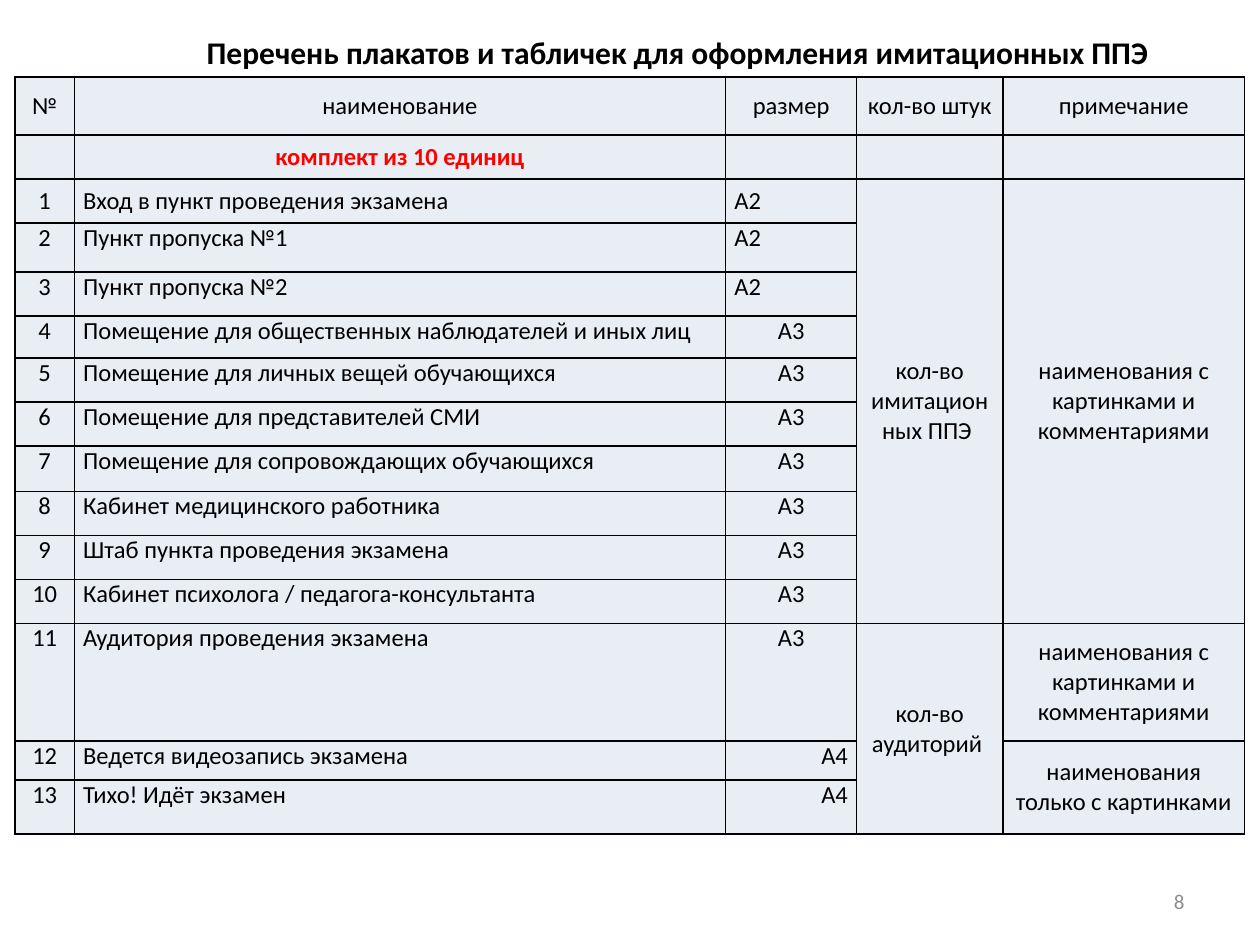
from dataclasses import dataclass

from lxml.etree import SubElement
from pptx import Presentation
from pptx.dml.color import RGBColor
from pptx.enum.text import MSO_ANCHOR, MSO_AUTO_SIZE, PP_ALIGN
from pptx.oxml.ns import qn
from pptx.slide import Slide
from pptx.table import Table, _Cell
from pptx.text.text import TextFrame
from pptx.util import Inches, Pt


@dataclass(frozen=True)
class Theme:
    font: str = "Calibri"
    title_size: int = 18
    table_size: int = 14
    number_size: int = 12
    ink: str = "000000"
    accent: str = "FF0000"
    muted: str = "8C8C8C"
    cell_fill: str = "E9EDF4"
    border_width: int = 1


@dataclass(frozen=True)
class Poster:
    name: str
    size: str


@dataclass(frozen=True)
class SharedCell:
    """A cell of the right-hand columns that covers one or more poster rows."""
    first: int
    last: int
    column: int
    text: str


THEME = Theme()
COLUMN_WIDTHS = (0.47, 5.17, 1.04, 1.16, 1.92)
ROW_HEIGHTS = (0.46, 0.35, 0.35, 0.39, 0.35, 0.33, 0.35, 0.35,
               0.36, 0.35, 0.35, 0.35, 0.93, 0.31, 0.43)
HEADINGS = ("№", "наименование", "размер", "кол-во штук", "примечание")
POSTERS = (
    Poster("Вход в пункт проведения экзамена", "А2"),
    Poster("Пункт пропуска №1", "А2"),
    Poster("Пункт пропуска №2", "А2"),
    Poster("Помещение для общественных наблюдателей и иных лиц", "А3"),
    Poster("Помещение для личных вещей обучающихся", "А3"),
    Poster("Помещение для представителей СМИ", "А3"),
    Poster("Помещение для сопровождающих обучающихся", "А3"),
    Poster("Кабинет медицинского работника", "А3"),
    Poster("Штаб пункта проведения экзамена", "А3"),
    Poster("Кабинет психолога / педагога-консультанта", "А3"),
    Poster("Аудитория проведения экзамена", "А3"),
    Poster("Ведется видеозапись экзамена", "А4"),
    Poster("Тихо! Идёт экзамен", "А4"),
)
SIZE_ALIGNMENT = {"А2": PP_ALIGN.LEFT, "А3": PP_ALIGN.CENTER, "А4": PP_ALIGN.RIGHT}
PICTURES_AND_COMMENTS = "наименования с картинками и комментариями"
SHARED_CELLS = (
    SharedCell(1, 10, 3, "кол-во имитационных ППЭ "),
    SharedCell(1, 10, 4, PICTURES_AND_COMMENTS),
    SharedCell(11, 13, 3, "кол-во аудиторий "),
    SharedCell(11, 11, 4, PICTURES_AND_COMMENTS),
    SharedCell(12, 13, 4, "наименования только с картинками"),
)


def write(frame: TextFrame, text: str, size: int, color: str = THEME.ink,
          bold: bool = False, align: PP_ALIGN = PP_ALIGN.LEFT) -> None:
    frame.text = text
    paragraph = frame.paragraphs[0]
    paragraph.alignment = align
    for run in paragraph.runs:
        run.font.name = THEME.font
        run.font.size = Pt(size)
        run.font.bold = bold
        run.font.color.rgb = RGBColor.from_string(color)


def write_cell(cell: _Cell, text: str, align: PP_ALIGN = PP_ALIGN.CENTER,
               anchor: MSO_ANCHOR = MSO_ANCHOR.MIDDLE,
               color: str = THEME.ink, bold: bool = False) -> None:
    write(cell.text_frame, text, THEME.table_size, color, bold, align)
    cell.vertical_anchor = anchor


def style_cell(cell: _Cell) -> None:
    """Set margins, black borders on all sides and the fill."""
    cell.margin_left = cell.margin_right = Inches(0.07)
    cell.margin_top = cell.margin_bottom = 0
    properties = cell._tc.get_or_add_tcPr()
    for side in ("a:lnL", "a:lnR", "a:lnT", "a:lnB"):
        border = SubElement(properties, qn(side), w=str(Pt(THEME.border_width)))
        SubElement(SubElement(border, qn("a:solidFill")), qn("a:srgbClr"), val=THEME.ink)
    cell.fill.solid()
    cell.fill.fore_color.rgb = RGBColor.from_string(THEME.cell_fill)


def add_grid(slide: Slide) -> Table:
    table = slide.shapes.add_table(
        len(ROW_HEIGHTS), len(COLUMN_WIDTHS), Inches(0.12), Inches(0.61),
        Inches(sum(COLUMN_WIDTHS)), Inches(sum(ROW_HEIGHTS))).table
    for column, width in zip(table.columns, COLUMN_WIDTHS):
        column.width = Inches(width)
    for row, height in zip(table.rows, ROW_HEIGHTS):
        row.height = Inches(height)
    for cell in table.iter_cells():
        style_cell(cell)
    return table


def fill_table(table: Table) -> None:
    for column, heading in enumerate(HEADINGS):
        write_cell(table.cell(0, column), heading)
    write_cell(table.cell(1, 1), "комплект из 10 единиц", color=THEME.accent, bold=True)
    for number, poster in enumerate(POSTERS, start=1):
        row = number + 1
        anchor = MSO_ANCHOR.MIDDLE if number == 1 else MSO_ANCHOR.TOP
        write_cell(table.cell(row, 0), str(number), anchor=anchor)
        write_cell(table.cell(row, 1), poster.name, PP_ALIGN.LEFT, anchor)
        write_cell(table.cell(row, 2), poster.size, SIZE_ALIGNMENT[poster.size], anchor)
    for shared in SHARED_CELLS:
        top = table.cell(shared.first + 1, shared.column)
        if shared.last > shared.first:
            top.merge(table.cell(shared.last + 1, shared.column))
        write_cell(top, shared.text)


def add_title(slide: Slide) -> None:
    title = slide.shapes.title
    title.left, title.top = Inches(1.54), Inches(0.21)
    title.width, title.height = Inches(7.76), Inches(0.4)
    frame = title.text_frame
    frame.word_wrap = False
    frame.auto_size = MSO_AUTO_SIZE.SHAPE_TO_FIT_TEXT
    frame.vertical_anchor = MSO_ANCHOR.TOP
    write(frame, "Перечень плакатов и табличек для оформления имитационных ППЭ",
          THEME.title_size, bold=True)


def add_page_number(slide: Slide) -> None:
    frame = slide.shapes.add_textbox(
        Inches(7.17), Inches(6.95), Inches(2.33), Inches(0.4)).text_frame
    frame.word_wrap = True
    frame.vertical_anchor = MSO_ANCHOR.MIDDLE
    write(frame, "8", THEME.number_size, THEME.muted, align=PP_ALIGN.RIGHT)


def main() -> None:
    presentation = Presentation()
    presentation.slide_width, presentation.slide_height = Inches(10), Inches(7.5)
    slide = presentation.slides.add_slide(presentation.slide_layouts.get_by_name("Title Only"))
    add_title(slide)
    fill_table(add_grid(slide))
    add_page_number(slide)
    presentation.save("out.pptx")


if __name__ == "__main__":
    main()
